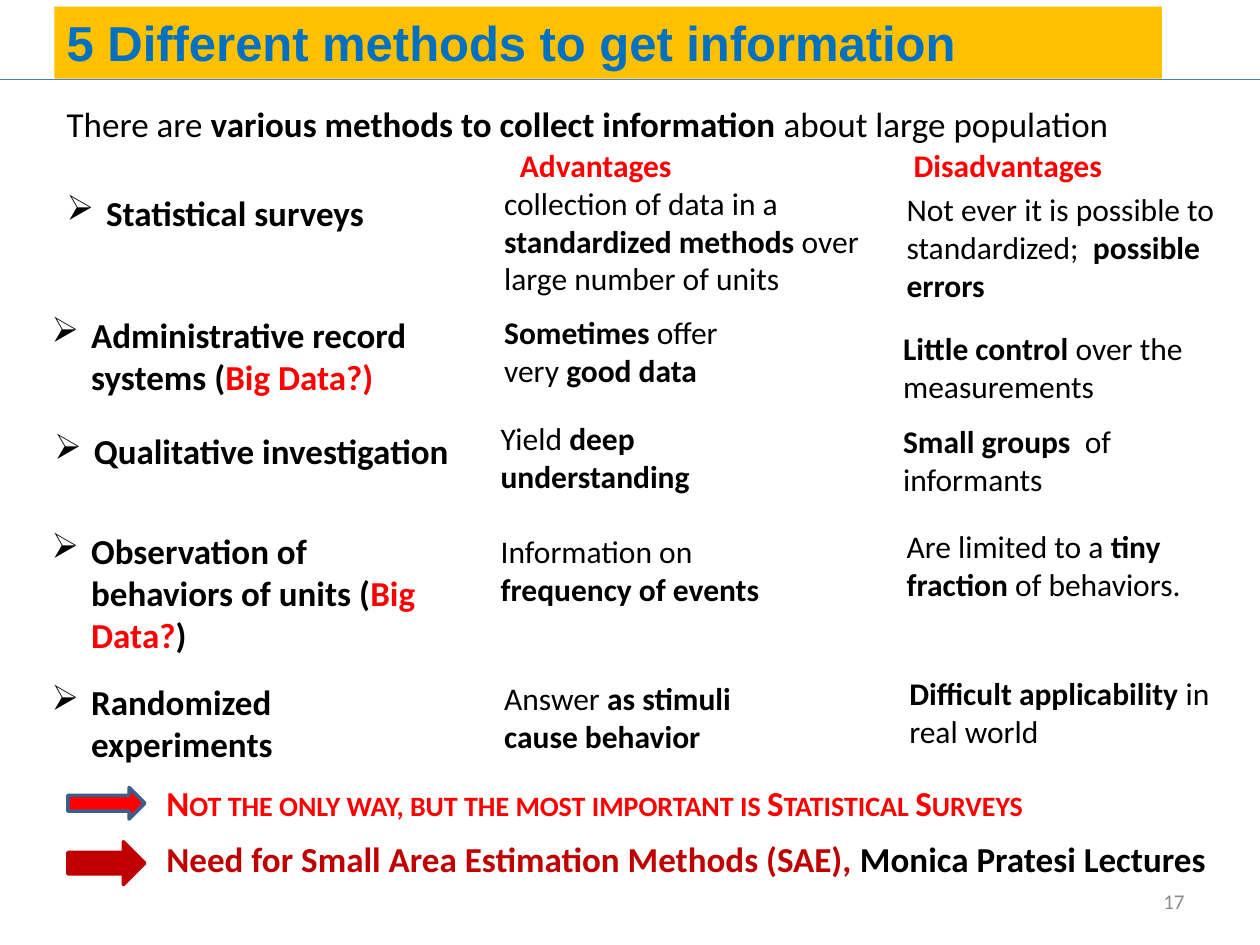
from lxml import etree
from pptx import Presentation
from pptx.dml.color import RGBColor
from pptx.enum.shapes import MSO_CONNECTOR, MSO_SHAPE
from pptx.enum.text import MSO_ANCHOR, PP_ALIGN
from pptx.oxml.ns import qn
from pptx.util import Pt

LEFT, RIGHT = PP_ALIGN.LEFT, PP_ALIGN.RIGHT
TOP, MIDDLE = MSO_ANCHOR.TOP, MSO_ANCHOR.MIDDLE
RECTANGLE, ARROW = MSO_SHAPE.RECTANGLE, MSO_SHAPE.RIGHT_ARROW
STRAIGHT = MSO_CONNECTOR.STRAIGHT

BLACK, RED, DARK_RED = "000000", "FF0000", "C00000"
AMBER, BLUE, GREY = "FFC000", "0070C0", "8C8C8C"
BULLET_INDENT = 22.5
METHOD_SIZE, COMMENT_SIZE = 20, 18
COMMENT_HEIGHT = 51

# Each span is (text, bold) or (text, bold, colour).
# Methods: left, top, width, height, spans
METHODS = [
    (31, 105.8, 232.5, 31.5, [("Statistical surveys", True)]),
    (22.5, 175.5, 244, 55.5,
     [("Administrative record systems (", True), ("Big Data?)", True, RED)]),
    (24, 242, 244, 31.5, [("Qualitative investigation", True)]),
    (22.5, 299, 227, 80,
     [("Observation of behaviors of units (", True),
      ("Big Data?", True, RED), (")", True)]),
    (22.5, 385.5, 199, 55.5, [("Randomized experiments", True)]),
]

# Comments: left, top, width, spans
ADVANTAGES = [
    (281, 101.5, 221,
     [("collection of data in a ", False), ("standardized methods ", True),
      ("over large number of units", False)]),
    (281, 175.5, 147.5,
     [("Sometimes", True), (" offer very ", False), ("good data", True)]),
    (279, 236, 158.5, [("Yield ", False), ("deep understanding", True)]),
    (279, 300.5, 175.5,
     [("Information on ", False), ("frequency of events", True)]),
    (281, 384.5, 175.5,
     [("Answer ", False), ("as stimuli cause behavior", True)]),
]
DISADVANTAGES = [
    (511, 105, 199,
     [("Not ever it is possible to standardized;  ", False),
      ("possible errors", True)]),
    (509, 184.5, 187,
     [("Little control ", True), ("over the measurements", False)]),
    (509, 237.5, 179.5, [("Small groups  ", True), ("of informants", False)]),
    (511, 297.5, 173.5,
     [("Are limited to a ", False), ("tiny fraction", True),
      (" of behaviors.", False)]),
    (512.5, 381.5, 186.5,
     [("Difficult applicability ", True), ("in real world", False)]),
]


def colour(value):
    return RGBColor.from_string(value)


def add_bullet(para):
    properties = para._p.get_or_add_pPr()
    properties.set("marL", str(Pt(BULLET_INDENT)))
    properties.set("indent", str(-Pt(BULLET_INDENT)))
    etree.SubElement(properties, qn("a:buFont"), typeface="Wingdings")
    etree.SubElement(properties, qn("a:buChar"), char="Ø")


def write_text(box, spans, size=COMMENT_SIZE, font="Calibri", default=BLACK,
               align=LEFT, anchor=TOP, bullet=False, small_caps=False):
    frame = box.text_frame
    frame.word_wrap = True
    frame.vertical_anchor = anchor
    para = frame.paragraphs[0]
    para.alignment = align
    if bullet:
        add_bullet(para)
    for text, bold, *own_colour in spans:
        span = para.add_run()
        span.text = text
        span.font.name = font
        span.font.size = Pt(size)
        span.font.bold = bold
        span.font.color.rgb = colour(own_colour[0] if own_colour else default)
        if small_caps:
            span._r.get_or_add_rPr().set("cap", "small")


def add_text(page, left, top, width, height, spans, **text_format):
    box = page.shapes.add_textbox(Pt(left), Pt(top), Pt(width), Pt(height))
    write_text(box, spans, **text_format)


def add_filled_shape(page, kind, left, top, width, height, fill, line=None):
    shape = page.shapes.add_shape(kind, Pt(left), Pt(top), Pt(width), Pt(height))
    shape.shadow.inherit = False
    shape.fill.solid()
    shape.fill.fore_color.rgb = colour(fill)
    if line:
        shape.line.color.rgb = colour(line)
        shape.line.width = Pt(2)
    else:
        shape.line.fill.background()
    return shape


def add_rule(page, top, width):
    rule = page.shapes.add_connector(STRAIGHT, Pt(0), Pt(top), Pt(width), Pt(top))
    rule.line.color.rgb = colour("4B7EBC")
    rule.line.width = Pt(0.75)
    etree.SubElement(rule._element.spPr, qn("a:effectLst"))


def main():
    deck = Presentation()
    deck.slide_width, deck.slide_height = Pt(720), Pt(540)
    page = deck.slides.add_slide(deck.slide_layouts[6])

    # Title band, rule and page number
    band = add_filled_shape(page, RECTANGLE, 31, 3.8, 633, 41.2, AMBER)
    write_text(band, [("5 Different methods to get information", True)],
               size=28, font="Arial", default=BLUE)
    add_rule(page, 45.3, 720)
    add_text(page, 516, 500.5, 168, 28.8, [("17", False)], size=12,
             default=GREY, align=RIGHT, anchor=MIDDLE)

    # Introduction and column headings
    add_text(page, 31, 55, 633, 31.5,
             [("There are ", False),
              ("various methods to collect information ", True),
              ("about large population", False)], size=METHOD_SIZE)
    for left, width, heading in [(290, 153.5, "Advantages"),
                                 (515, 181.5, "Disadvantages")]:
        add_text(page, left, 80, width, 29, [(heading, True)], default=RED)

    # Methods with their advantages and disadvantages
    for left, top, width, height, spans in METHODS:
        add_text(page, left, top, width, height, spans,
                 size=METHOD_SIZE, bullet=True)
    for left, top, width, spans in ADVANTAGES + DISADVANTAGES:
        add_text(page, left, top, width, COMMENT_HEIGHT, spans)

    # Conclusions
    add_filled_shape(page, ARROW, 38.8, 450, 44, 18, RED, line="3A5F8C")
    add_text(page, 88, 443, 557, 31.5,
             [("Not the only way, but the most important is Statistical Surveys",
               True)], size=METHOD_SIZE, default=RED, small_caps=True)
    add_filled_shape(page, ARROW, 38.8, 481, 44, 24.5, DARK_RED, line=DARK_RED)
    add_text(page, 88, 475, 610.5, 31.5,
             [("Need for Small Area Estimation Methods (SAE), ", True, DARK_RED),
              ("Monica Pratesi Lectures", True)], size=METHOD_SIZE)

    deck.save("out.pptx")


if __name__ == "__main__":
    main()
